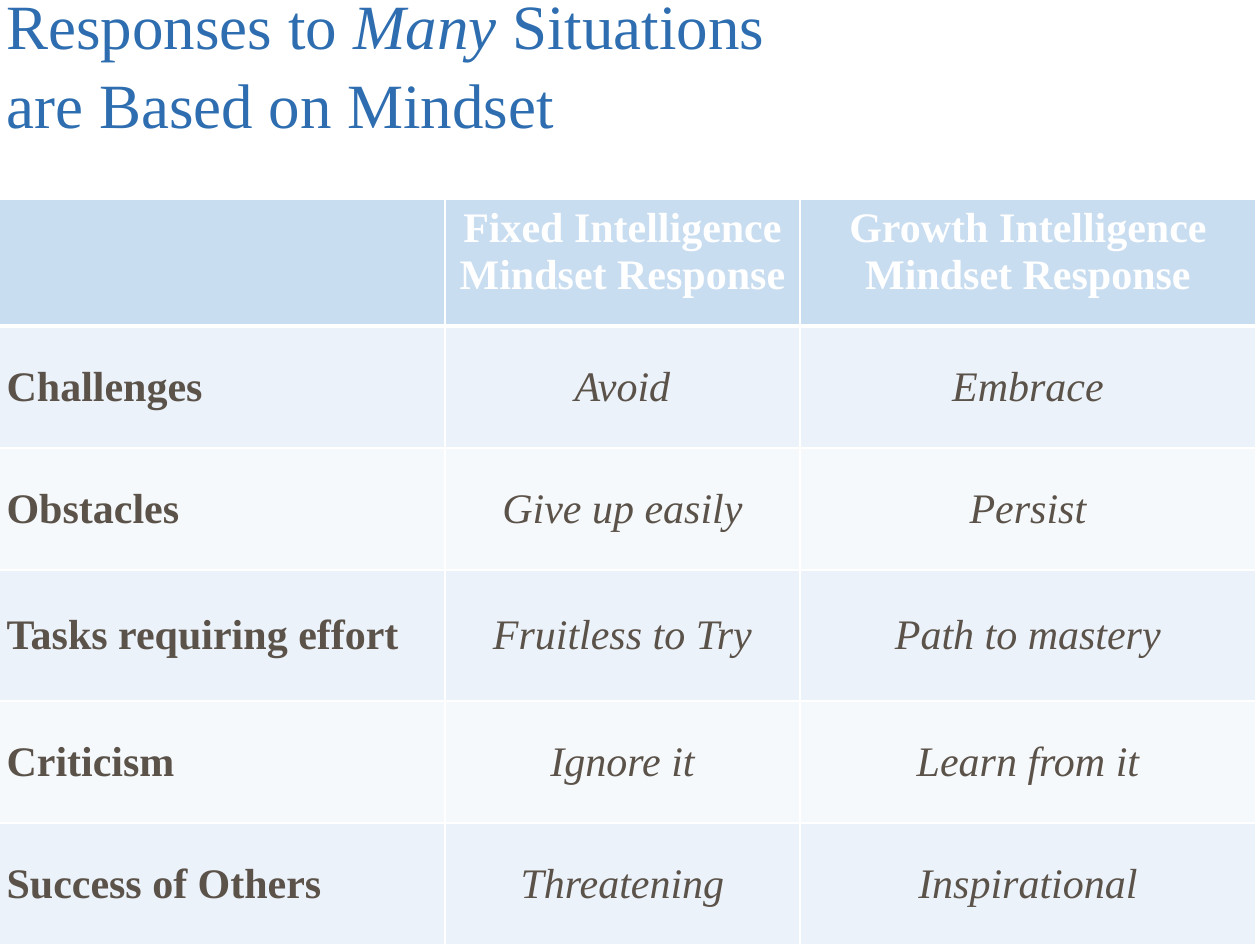
"""Build a slide with a table comparing fixed and growth mindset responses."""
from lxml import etree
from pptx import Presentation, util as u
from pptx.dml.color import RGBColor
from pptx.enum import text
from pptx.oxml.ns import qn

PX = 914400 // 126
FONT = "Times New Roman"


def style(font, size, color, bold=False, italic=False):
    font.name, font.size, font.bold, font.italic = FONT, u.Pt(size), bold, italic
    font.color.rgb = RGBColor.from_string(color)


def border(cell, side, points, color):
    tcPr = cell._tc.get_or_add_tcPr()
    ln = etree.Element(qn(f"a:ln{side}"), w=str(u.Pt(points)))
    fill = etree.SubElement(ln, qn("a:solidFill"))
    etree.SubElement(fill, qn("a:srgbClr"), val=color)
    tcPr.insert("LRTB".index(side), ln)


prs = Presentation()
prs.slide_width, prs.slide_height = u.Inches(10), u.Inches(7.5)
s = prs.slides.add_slide(prs.slide_layouts[5])

title = s.shapes.title
title.left, title.top, title.width, title.height = [v * PX for v in (-6, 42, 1261, 179)]
tf = title.text_frame
tf.word_wrap = True
tf.auto_size = text.MSO_AUTO_SIZE.NONE
tf.vertical_anchor = text.MSO_ANCHOR.BOTTOM
tf.margin_top, tf.margin_bottom = 0, 80 * PX
p = tf.paragraphs[0]
p.alignment = text.PP_ALIGN.LEFT
p.line_spacing = 1.04
for words, italic in (("Responses to ", False), ("Many", True),
                      (" Situations", False), ("are Based on Mindset", False)):
    if words.startswith("are"):
        p.add_line_break()
    r = p.add_run()
    r.text = words
    style(r.font, 36, "2E6EB0", italic=italic)

rows = [
    ("", "Fixed Intelligence Mindset Response", "Growth Intelligence Mindset Response"),
    ("Challenges", "Avoid", "Embrace"),
    ("Obstacles", "Give up easily", "Persist"),
    ("Tasks requiring effort", "Fruitless to Try", "Path to mastery"),
    ("Criticism", "Ignore it", "Learn from it"),
    ("Success of Others", "Threatening", "Inspirational"),
]
widths = (451, 355, 456)
heights = (127, 122, 122, 131, 122, 122)
table = s.shapes.add_table(len(rows), len(widths), -6 * PX, 199 * PX,
                           sum(widths) * PX, sum(heights) * PX).table
for column, width in zip(table.columns, widths):
    column.width = width * PX
for row, height in zip(table.rows, heights):
    row.height = height * PX

for i, row in enumerate(rows):
    header = i == 0
    for j, words in enumerate(row):
        cell = table.cell(i, j)
        cell.fill.solid()
        fill = "C9DDF1" if header else ("F5F9FC", "EBF2FA")[i % 2]
        cell.fill.fore_color.rgb = RGBColor.from_string(fill)
        cell.vertical_anchor = text.MSO_ANCHOR.TOP if header else text.MSO_ANCHOR.MIDDLE
        for side in "LRTB":
            thick = (header and side == "B") or (i == 1 and side == "T")
            border(cell, side, 3 if thick else 1, "FFFFFF")
        p = cell.text_frame.paragraphs[0]
        p.alignment = text.PP_ALIGN.CENTER if header or j else text.PP_ALIGN.LEFT
        if words:
            p.text = words
            style(p.font, 24, "FFFFFF" if header else "5B5249",
                  bold=header or j == 0, italic=not header and j > 0)

prs.save("out.pptx")
